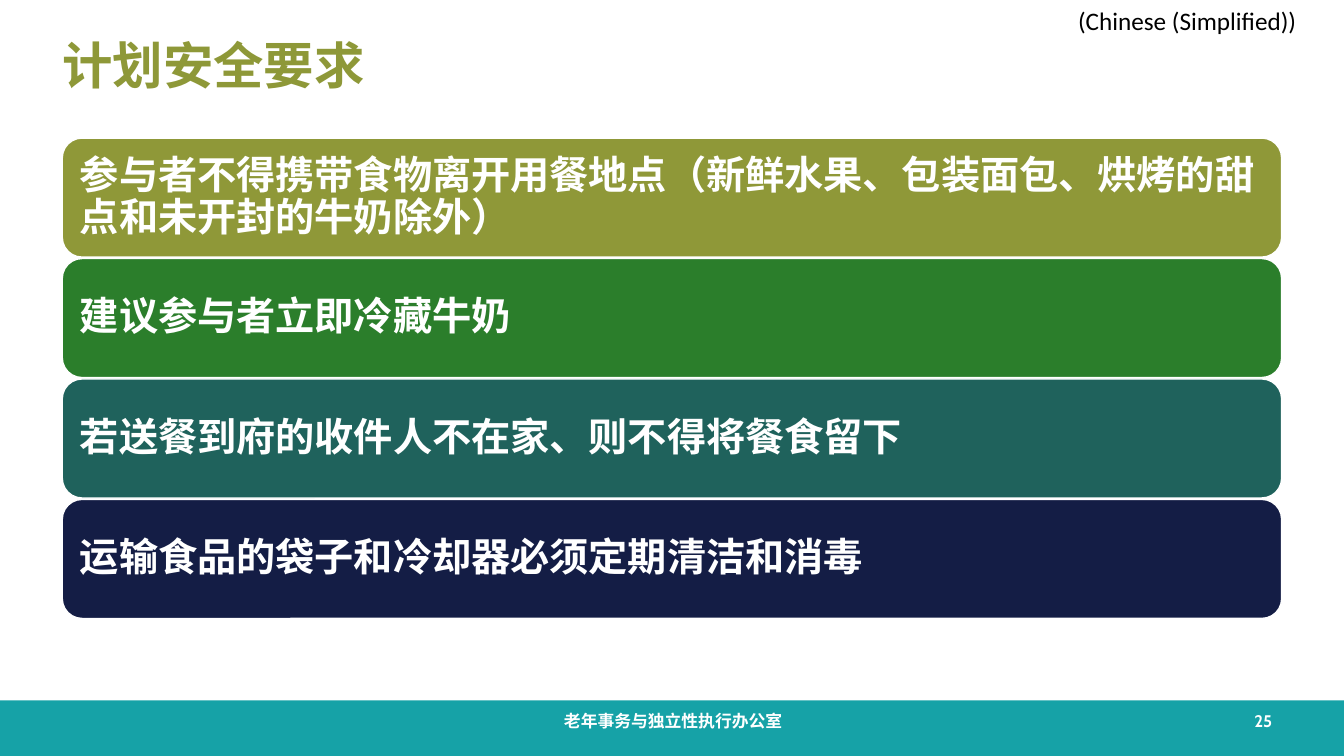
from lxml import etree
from pptx import Presentation
from pptx.dml.color import RGBColor
from pptx.enum.shapes import MSO_SHAPE
from pptx.enum.text import MSO_ANCHOR, PP_ALIGN
from pptx.oxml.ns import qn
from pptx.util import Cm, Pt

RECT, ROUNDED = MSO_SHAPE.RECTANGLE, MSO_SHAPE.ROUNDED_RECTANGLE
TOP, MIDDLE = MSO_ANCHOR.TOP, MSO_ANCHOR.MIDDLE
LEFT, CENTER, RIGHT = PP_ALIGN.LEFT, PP_ALIGN.CENTER, PP_ALIGN.RIGHT
CJK = "Noto Sans CJK SC"
COLORS = {
    "white": "FFFFFF", "black": "000000", "teal": "16A2A7", "title": "8E9838",
    "olive": "8F9838", "green": "2B7E2B", "pine": "1F625C", "navy": "141D45",
}


def rgb(name):
    return RGBColor.from_string(COLORS[name])


def write(sp, text, size, font, color="white", bold=True, align=LEFT,
          anchor=MIDDLE, wrap=True, inset=(0.25, 0.13), spacing=None):
    tf = sp.text_frame
    x, y = Cm(inset[0]), Cm(inset[1])
    frame = {"word_wrap": wrap, "vertical_anchor": anchor, "margin_left": x,
             "margin_right": x, "margin_top": y, "margin_bottom": y}
    for name, value in frame.items():
        setattr(tf, name, value)
    p = tf.paragraphs[0]
    p.alignment, p.line_spacing = align, spacing
    r = p.add_run()
    r.text = text
    for name, value in {"size": Pt(size), "bold": bold, "name": font}.items():
        setattr(r.font, name, value)
    r.font.color.rgb = rgb(color)
    # East Asian glyphs take their own typeface
    etree.SubElement(r.font._element, qn("a:ea"), typeface=CJK)


prs = Presentation()
prs.slide_width, prs.slide_height = Cm(33.87), Cm(19.05)
s = prs.slides.add_slide(prs.slide_layouts[6])

# Footer band
band = s.shapes.add_shape(RECT, 0, Cm(17.65), prs.slide_width, Cm(1.4))
band.shadow.inherit = False
band.fill.solid()
band.fill.fore_color.rgb = rgb("teal")
band.line.fill.background()

# Free text: left, top, width, height, text, format
texts = [
    (11.25, 17.65, 11.43, 1.02, "老年事务与独立性执行办公室",
     {"size": 12, "font": "Cabin", "align": CENTER}),
    (31.01, 17.65, 1.3, 1.02, "25",
     {"size": 12, "font": "Cabin", "align": RIGHT}),
    (26.92, 0, 6.12, 1.02, "(Chinese (Simplified))",
     {"size": 18, "font": "Calibri", "color": "black", "bold": False,
      "anchor": TOP, "wrap": False}),
    (1.57, 1.07, 30.73, 1.12, "计划安全要求",
     {"size": 36, "font": CJK, "color": "title", "inset": (0, 0)}),
]
for left, top, width, height, text, fmt in texts:
    sp = s.shapes.add_textbox(Cm(left), Cm(top), Cm(width), Cm(height))
    write(sp, text, **fmt)

# Requirement bars
bars = [
    ("olive", "参与者不得携带食物离开用餐地点（新鲜水果、包装面包、烘烤的甜点和未开封的牛奶除外）"),
    ("green", "建议参与者立即冷藏牛奶"),
    ("pine", "若送餐到府的收件人不在家、则不得将餐食留下"),
    ("navy", "运输食品的袋子和冷却器必须定期清洁和消毒"),
]
for i, (color, text) in enumerate(bars):
    sp = s.shapes.add_shape(ROUNDED, Cm(1.57), Cm(3.48 + 3.035 * i), Cm(30.73), Cm(3))
    sp.shadow.inherit = False
    sp.fill.solid()
    sp.fill.fore_color.rgb = rgb(color)
    sp.line.color.rgb = rgb("white")
    sp.line.width = Pt(1)
    write(sp, text, 28, CJK, inset=(0.3, 0.3), spacing=0.9)

prs.save("out.pptx")
